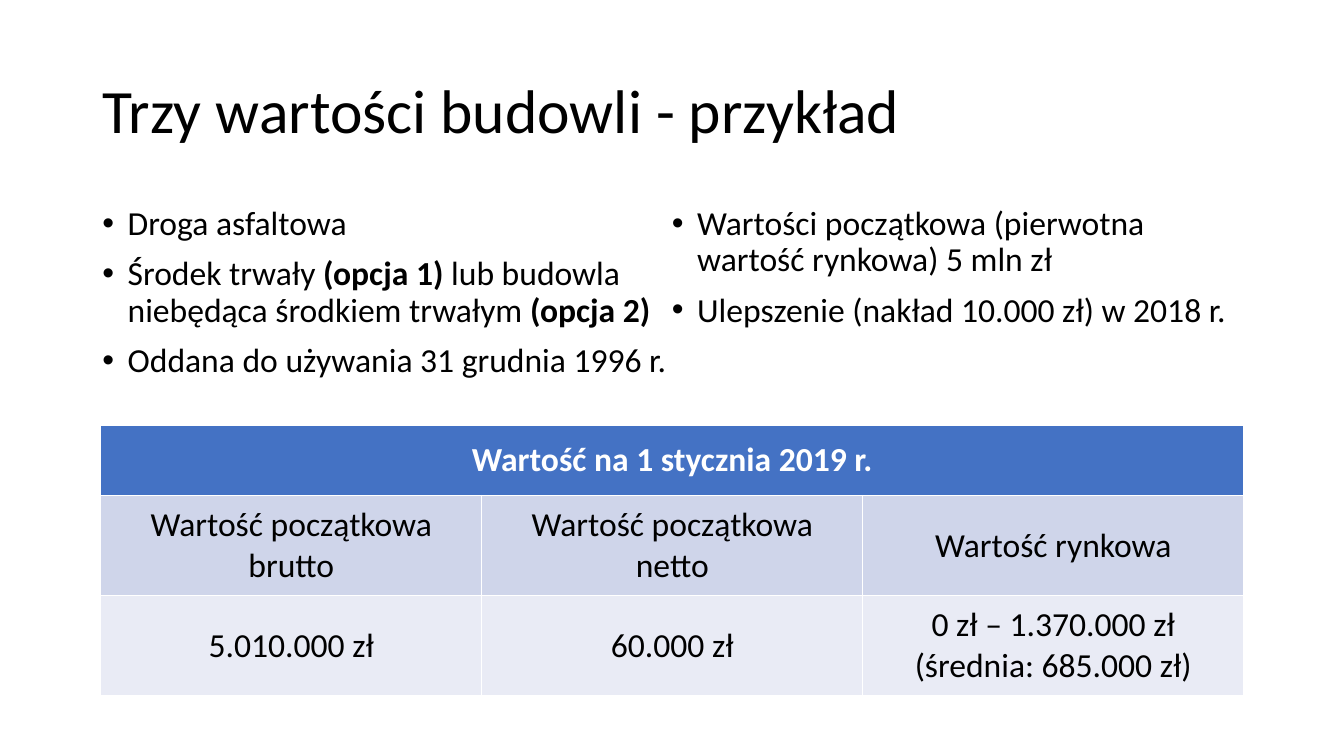
from dataclasses import dataclass

from pptx import Presentation
from pptx.dml.color import RGBColor
from pptx.enum.text import MSO_ANCHOR, MSO_AUTO_SIZE, PP_ALIGN
from pptx.util import Pt

MIDDLE, TOP = MSO_ANCHOR.MIDDLE, MSO_ANCHOR.TOP
CENTER, LEFT = PP_ALIGN.CENTER, PP_ALIGN.LEFT
NO_FIT = MSO_AUTO_SIZE.NONE

FONT = "Calibri"
COLORS = {
    "text": "000000",
    "header_text": "FFFFFF",
    "header": "4472C4",
    "labels": "CFD5EA",
    "values": "E9EBF5",
}


@dataclass
class Box:
    left: float
    top: float
    width: float
    height: float


@dataclass
class Row:
    texts: list[str]
    height: float
    fill: str
    color: str = "text"
    bold: bool = False


TITLE_BOX = Box(66, 28.8, 828, 104.4)
BODY_BOX = Box(66, 144, 828, 145.44)
TABLE_BOX = Box(72, 304, 816.48, 193)

# Each bullet is a list of (text, bold) runs
BULLETS = [
    [("Droga asfaltowa", False)],
    [("Środek trwały ", False), ("(opcja 1) ", True),
     ("lub budowla niebędąca środkiem trwałym ", False), ("(opcja 2)", True)],
    [("Oddana do używania 31 grudnia 1996 r.", False)],
    [("Wartości początkowa (pierwotna wartość rynkowa) 5 mln zł", False)],
    [("Ulepszenie (nakład 10.000 zł) w 2018 r.", False)],
]

ROWS = [
    Row(["Wartość na 1 stycznia 2019 r."], 50, "header", "header_text", True),
    Row(["Wartość początkowa brutto", "Wartość początkowa netto",
         "Wartość rynkowa"], 71.5, "labels"),
    Row(["5.010.000 zł", "60.000 zł",
         "0 zł – 1.370.000 zł\n(średnia: 685.000 zł)"], 71.5, "values"),
]
COLUMNS = 3


def place(sp, box: Box) -> None:
    sp.left, sp.top = Pt(box.left), Pt(box.top)
    sp.width, sp.height = Pt(box.width), Pt(box.height)


def style(p, size: float, color: str = "text", align=LEFT) -> None:
    p.alignment = align
    p.font.name = FONT
    p.font.size = Pt(size)
    p.font.color.rgb = RGBColor.from_string(COLORS[color])


def add_title(s, text: str) -> None:
    sp = s.shapes.title
    place(sp, TITLE_BOX)
    tf = sp.text_frame
    tf.text = text
    tf.vertical_anchor = MIDDLE
    tf.auto_size = NO_FIT
    p = tf.paragraphs[0]
    p.line_spacing = 0.9
    style(p, 44)


def add_bullets(s, bullets: list[list[tuple[str, bool]]]) -> None:
    sp = s.placeholders[1]
    place(sp, BODY_BOX)
    tf = sp.text_frame
    tf.vertical_anchor = TOP
    tf.auto_size = NO_FIT
    tf.word_wrap = True
    # Two text columns
    sp.text_frame._txBody.bodyPr.set("numCol", "2")
    for i, runs in enumerate(bullets):
        p = tf.add_paragraph() if i else tf.paragraphs[0]
        p.line_spacing = 0.9
        p.space_before = Pt(10)
        style(p, 24)
        # Hanging indent of the bullet
        pPr = p._p.get_or_add_pPr()
        pPr.set("marL", str(Pt(18)))
        pPr.set("indent", str(-Pt(18)))
        for text, bold in runs:
            r = p.add_run()
            r.text = text
            r.font.bold = bold


def add_values(s, rows: list[Row]) -> None:
    box = TABLE_BOX
    table = s.shapes.add_table(len(rows), COLUMNS, Pt(box.left), Pt(box.top),
                               Pt(box.width), Pt(box.height)).table
    for i, row in enumerate(rows):
        table.rows[i].height = Pt(row.height)
        for j, text in enumerate(row.texts):
            cell = table.cell(i, j)
            cell.text = text
            cell.vertical_anchor = MIDDLE
            cell.fill.solid()
            cell.fill.fore_color.rgb = RGBColor.from_string(COLORS[row.fill])
            for p in cell.text_frame.paragraphs:
                style(p, 24, row.color, CENTER)
                p.font.bold = row.bold
    # The header spans all columns
    table.cell(0, 0).merge(table.cell(0, COLUMNS - 1))


def main() -> None:
    prs = Presentation()
    prs.slide_width, prs.slide_height = Pt(960), Pt(540)
    s = prs.slides.add_slide(prs.slide_layouts[1])
    add_title(s, "Trzy wartości budowli - przykład")
    add_bullets(s, BULLETS)
    add_values(s, ROWS)
    prs.save("out.pptx")


if __name__ == "__main__":
    main()
